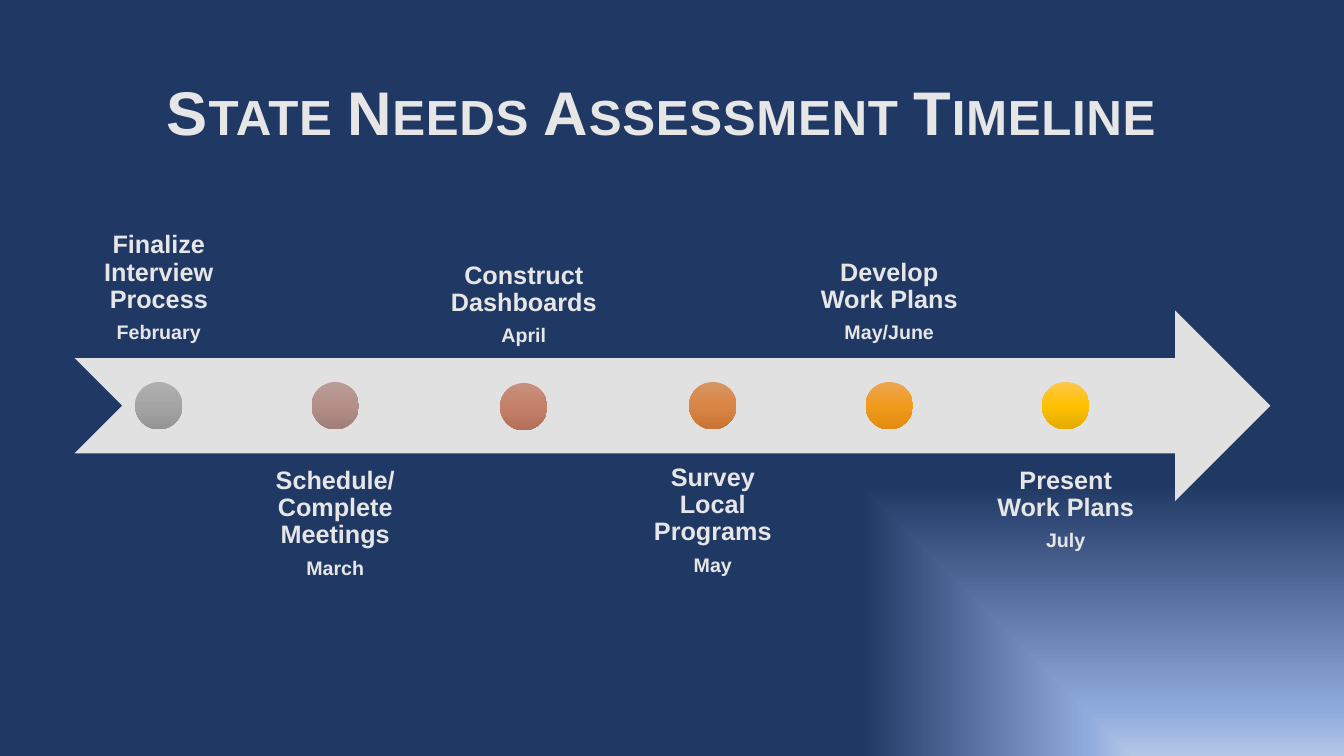
from dataclasses import dataclass

from pptx import Presentation
from pptx import util as u
from pptx.dml.color import RGBColor
from pptx.enum import shapes, text
from pptx.oxml import parse_xml
from pptx.oxml.ns import nsdecls, qn


@dataclass(frozen=True)
class Theme:
    font: str = "Arial"
    ink: str = "E7E6E6"
    arrow: str = "E1E1E1"
    title_size: int = 44
    step_size: int = 18
    month_size: int = 14
    background: tuple = ((0, "B4C7E7"), (12, "8FAADC"), (72, "203864"), (100, "203864"))
    dots: tuple = (
        ("AFAFAF", "A5A5A5", "939393"),
        ("BA9D97", "B38F88", "A17E77"),
        ("C7917E", "C48068", "B36F57"),
        ("D89666", "D98544", "C87535"),
        ("ECA552", "F19B1D", "E18B0F"),
        ("FFC64B", "FFC000", "E3AB00"),
    )


theme = Theme()


def set_gradient(props, stops, direction):
    """Replace the solid fill in a properties element with a gradient."""
    gs = "".join(f'<a:gs pos="{pos * 1000}"><a:srgbClr val="{color}"/></a:gs>'
                 for pos, color in stops)
    grad = parse_xml(f'<a:gradFill {nsdecls("a")} rotWithShape="1">'
                     f"<a:gsLst>{gs}</a:gsLst>{direction}</a:gradFill>")
    props.replace(props.find(qn("a:solidFill")), grad)


def format_paragraph(p, size):
    p.alignment = text.PP_ALIGN.CENTER
    p.line_spacing = 0.9
    font = p.runs[0].font
    font.name = theme.font
    font.size = u.Pt(size)
    font.bold = True
    font.color.rgb = RGBColor.from_string(theme.ink)


prs = Presentation()
prs.slide_width = u.Inches(13.33)
prs.slide_height = u.Inches(7.5)
s = prs.slides.add_slide(prs.slide_layouts[6])

s.background.fill.solid()
set_gradient(s.element.find(".//" + qn("p:bgPr")), theme.background,
             '<a:path path="rect"><a:fillToRect l="100000" t="100000"/></a:path>')

# Title
title = s.shapes.add_textbox(u.Inches(0.92), u.Inches(0.42), u.Inches(11.5), u.Inches(1.45))
tf = title.text_frame
tf.word_wrap = True
tf.vertical_anchor = text.MSO_ANCHOR.MIDDLE
tf.text = "State Needs Assessment Timeline"
format_paragraph(tf.paragraphs[0], theme.title_size)
rPr = tf.paragraphs[0].runs[0].font._element
rPr.set("cap", "small")
rPr.set("spc", "50")

# Timeline arrow
arrow = s.shapes.add_shape(shapes.MSO_SHAPE.NOTCHED_RIGHT_ARROW, u.Inches(0.74),
                           u.Inches(3.08), u.Inches(11.86), u.Inches(1.89))
arrow.shadow.inherit = False
arrow.fill.solid()
arrow.fill.fore_color.rgb = RGBColor.from_string(theme.arrow)
arrow.line.fill.background()

# Steps alternate above and below the arrow: centre, label width, inset, step, month
steps = [
    (1.575, 1.67, 0.14, "Finalize Interview Process", "February"),
    (3.325, 1.67, 0.14, "Schedule/ Complete Meetings", "March"),
    (5.195, 1.91, 0.14, "Construct Dashboards", "April"),
    (7.07, 1.67, 0.11, "Survey Local Programs", "May"),
    (8.82, 1.67, 0.14, "Develop Work Plans", "May/June"),
    (10.57, 1.67, 0.14, "Present Work Plans", "July"),
]
label_height = 1.89
dot_size = 0.47

for i, (center, width, inset, step, month) in enumerate(steps):
    above = i % 2 == 0
    nudge = 0.03 if month == "April" else 0
    top = 1.66 + nudge if above else 4.5
    label = s.shapes.add_textbox(u.Inches(center - width / 2), u.Inches(top),
                                 u.Inches(width), u.Inches(label_height))
    tf = label.text_frame
    tf.word_wrap = True
    tf.vertical_anchor = text.MSO_ANCHOR.BOTTOM if above else text.MSO_ANCHOR.TOP
    tf.margin_left = tf.margin_right = tf.margin_top = tf.margin_bottom = u.Inches(inset)
    tf.text = f"{step}\n{month}"
    for p, size in zip(tf.paragraphs, (theme.step_size, theme.month_size)):
        format_paragraph(p, size)
    tf.paragraphs[0].space_after = u.Pt(0.35 * theme.step_size)

    dot = s.shapes.add_shape(shapes.MSO_SHAPE.OVAL, u.Inches(center - dot_size / 2),
                             u.Inches(3.79 + nudge / 3), u.Inches(dot_size), u.Inches(dot_size))
    dot.shadow.inherit = False
    dot.line.fill.background()
    dot.fill.solid()
    set_gradient(dot.element.spPr, zip((0, 50, 100), theme.dots[i]),
                 '<a:lin ang="5400000" scaled="0"/>')

prs.save("out.pptx")
